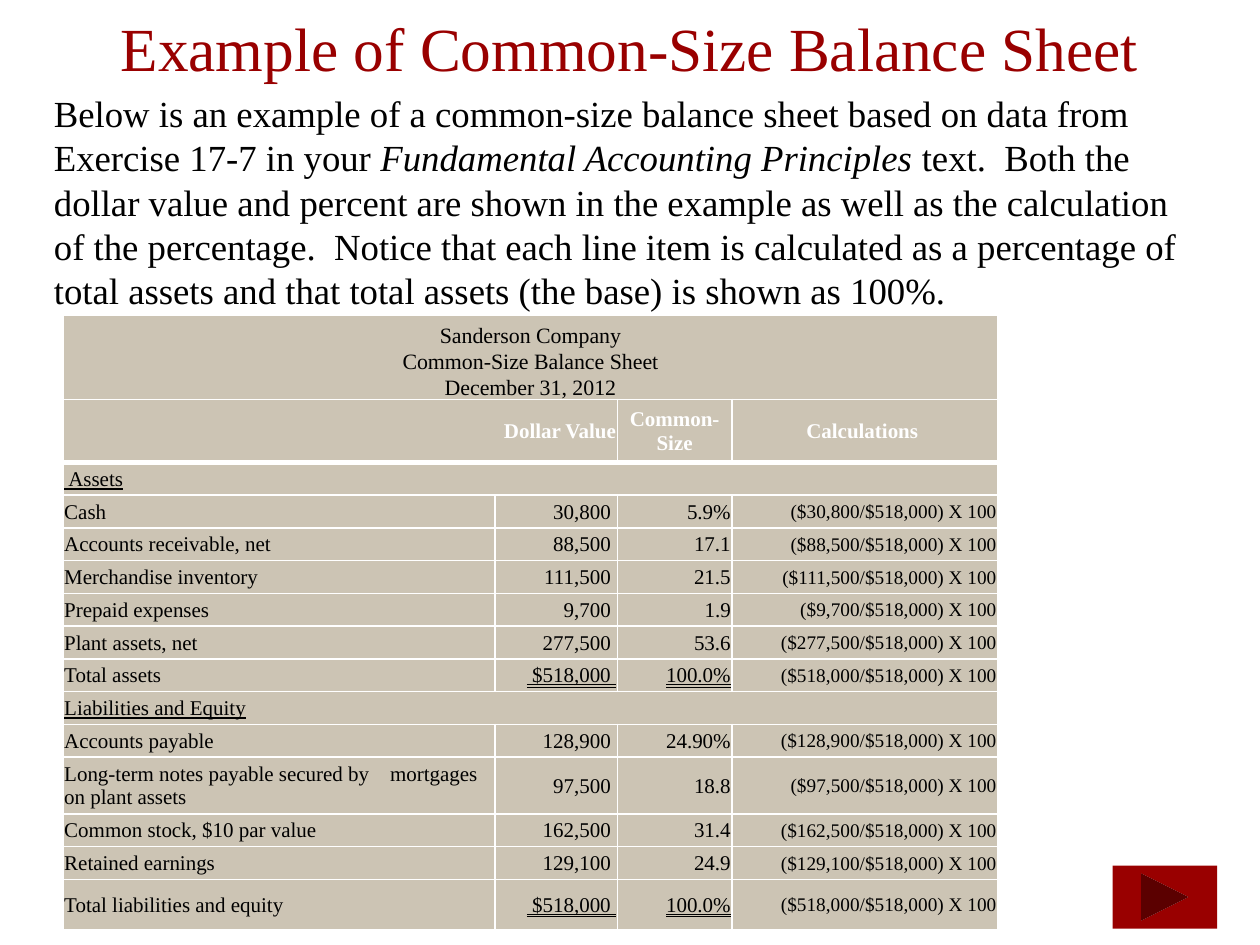
from lxml.etree import SubElement
from pptx import Presentation
from pptx.dml.color import RGBColor
from pptx.enum.shapes import MSO_SHAPE as Shape
from pptx.enum.text import MSO_ANCHOR as Anchor, MSO_UNDERLINE as Underline, PP_ALIGN as Align
from pptx.oxml.ns import qn
from pptx.util import Inches, Pt

# Content
TITLE = "Example of Common-Size Balance Sheet"
INTRO = [
    ("Below is an example of a common-size balance sheet based on data from "
     "Exercise 17-7 in your ", False),
    ("Fundamental Accounting Principles", True),
    (" text.  Both the dollar value and percent are shown in the example as well "
     "as the calculation of the percentage.  Notice that each line item is "
     "calculated as a percentage of total assets and that total assets (the base) "
     "is shown as 100%.", False),
]
STATEMENT_HEADING = ["Sanderson Company", "Common-Size Balance Sheet", "December 31, 2012"]
HEADERS = {0: ("Dollar Value", Align.RIGHT), 2: ("Common-Size", Align.CENTER),
           3: ("Calculations ", Align.CENTER)}
TOTAL = "$518,000"
# A one-item row is a section; the others hold label, amount and percent
ROWS = [
    (" Assets",),
    ("Cash", "30,800", "5.9%"),
    ("Accounts receivable, net", "88,500", "17.1"),
    ("Merchandise inventory", "111,500", "21.5"),
    ("Prepaid expenses", "9,700", "1.9"),
    ("Plant assets, net", "277,500", "53.6"),
    ("Total assets", TOTAL, "100.0%"),
    ("Liabilities and Equity",),
    ("Accounts payable", "128,900", "24.90%"),
    ("Long-term notes payable secured by    mortgages on plant assets", "97,500", "18.8"),
    ("Common stock, $10 par value", "162,500", "31.4"),
    ("Retained earnings", "129,100", "24.9"),
    ("Total liabilities and equity", TOTAL, "100.0%"),
]

# Theme and layout
THEME = {
    "font": "Times New Roman", "accent": "990000", "ink": "000000",
    "panel": "CCC4B4", "light": "FFFFFF",
    "title": 35, "intro": 21, "heading": 12.5, "cell": 12, "calculation": 11,
    "intro_line": 25.3, "heading_line": 14.9, "rule": 1, "heavy_rule": 3,
}
COLUMN_WIDTHS = [3.43, 0.97, 0.91, 2.11]
ROW_HEIGHT = 0.26
SPECIAL_HEIGHTS = {0: 0.5, 10: 0.45, 13: 0.4}
CELL_FORMAT = {
    "vertical_anchor": Anchor.MIDDLE, "margin_left": Inches(0.01),
    "margin_right": Inches(0.01), "margin_top": Inches(0.01), "margin_bottom": 0,
}


def color(name):
    return RGBColor.from_string(THEME[name])


def add_run(paragraph, text, size, ink="ink", **styles):
    run = paragraph.add_run()
    run.text = text
    run.font.color.rgb = color(ink)
    for name, value in {"name": THEME["font"], "size": Pt(THEME[size]), **styles}.items():
        setattr(run.font, name, value)


def add_text_box(slide, box, anchor):
    frame = slide.shapes.add_textbox(*map(Inches, box)).text_frame
    frame.word_wrap = True
    frame.vertical_anchor = anchor
    return frame.paragraphs[0]


def add_panel(slide, kind, box, fill):
    shape = slide.shapes.add_shape(kind, *map(Inches, box))
    shape.shadow.inherit = False
    shape.fill.solid()
    shape.fill.fore_color.rgb = color(fill)
    return shape


def draw_borders(cell, **heavy):
    properties = cell._tc.get_or_add_tcPr()
    for position, side in enumerate(("lnL", "lnR", "lnT", "lnB")):
        width = THEME["heavy_rule" if heavy.get(side) else "rule"]
        line = properties.makeelement(qn(f"a:{side}"), {"w": str(Pt(width))})
        fill = SubElement(line, qn("a:solidFill"))
        SubElement(fill, qn("a:srgbClr"), val=THEME["light"])
        properties.insert(position, line)


def write_cell(cell, text, align=Align.LEFT, size="cell", ink="ink", **styles):
    paragraph = cell.text_frame.paragraphs[0]
    paragraph.alignment = align
    add_run(paragraph, text, size, ink, **styles)


def add_balance_sheet(slide):
    row_count = len(ROWS) + 1
    heights = [SPECIAL_HEIGHTS.get(index, ROW_HEIGHT) for index in range(row_count)]
    size = (sum(COLUMN_WIDTHS), sum(heights))
    table = slide.shapes.add_table(row_count, len(COLUMN_WIDTHS),
                                   *map(Inches, (0.5, 3.17, *size))).table
    table.first_row = table.horz_banding = False
    for column, width in zip(table.columns, COLUMN_WIDTHS):
        column.width = Inches(width)

    # Cell format
    for row_index, (row, height) in enumerate(zip(table.rows, heights)):
        row.height = Inches(height)
        for cell in row.cells:
            for name, value in CELL_FORMAT.items():
                setattr(cell, name, value)
            cell.fill.solid()
            cell.fill.fore_color.rgb = color("panel")
            draw_borders(cell, lnB=row_index == 0, lnT=row_index == 1)

    # Header row
    table.cell(0, 0).merge(table.cell(0, 1))
    for column_index, (text, align) in HEADERS.items():
        write_cell(table.cell(0, column_index), text, align, ink="light", bold=True)

    # Sections and line items
    for row_index, (label, *values) in enumerate(ROWS, start=1):
        cells = table.rows[row_index].cells
        if not values:
            cells[0].merge(cells[3])
            write_cell(cells[0], label, bold=False, underline=True)
            continue
        amount, percent = values
        is_total = amount == TOTAL
        underline = Underline.DOUBLE_LINE if is_total else False
        amount_text = f" {amount} " if is_total else f"{amount} "
        write_cell(cells[0], label, bold=False)
        for cell, text in zip(cells[1:3] if isinstance(cells, list) else (cells[1], cells[2]),
                              (amount_text, percent)):
            write_cell(cell, text, Align.RIGHT, bold=False, underline=underline)
        calculation = f"(${amount.lstrip('$')}/{TOTAL}) X 100"
        write_cell(cells[3], calculation, Align.RIGHT, "calculation", bold=False)


def main():
    presentation = Presentation()
    presentation.slide_width, presentation.slide_height = Inches(10), Inches(7.5)
    slide = presentation.slides.add_slide(presentation.slide_layouts[6])

    # Title
    paragraph = add_text_box(slide, (0.75, -0.25, 8.5, 1.25), Anchor.MIDDLE)
    paragraph.alignment = Align.CENTER
    add_run(paragraph, TITLE, "title", "accent")

    # Introduction
    paragraph = add_text_box(slide, (0.33, 0.67, 9.33, 1.87), Anchor.TOP)
    paragraph.line_spacing = Pt(THEME["intro_line"])
    for text, italic in INTRO:
        add_run(paragraph, text, "intro", italic=italic)

    # Statement heading
    panel = add_panel(slide, Shape.RECTANGLE, (0.5, 2.5, 7.42, 0.73), "panel")
    panel.line.color.rgb = color("light")
    panel.line.width = Pt(0.75)
    frame = panel.text_frame
    frame.word_wrap = True
    for index, text in enumerate(STATEMENT_HEADING):
        paragraph = frame.add_paragraph() if index else frame.paragraphs[0]
        paragraph.alignment = Align.CENTER
        paragraph.line_spacing = Pt(THEME["heading_line"])
        add_run(paragraph, text, "heading")

    add_balance_sheet(slide)

    # Forward button
    button = add_panel(slide, Shape.ACTION_BUTTON_FORWARD_OR_NEXT,
                       (8.83, 6.87, 0.83, 0.5), "accent")
    button.line.fill.background()

    presentation.save("out.pptx")


if __name__ == "__main__":
    main()
